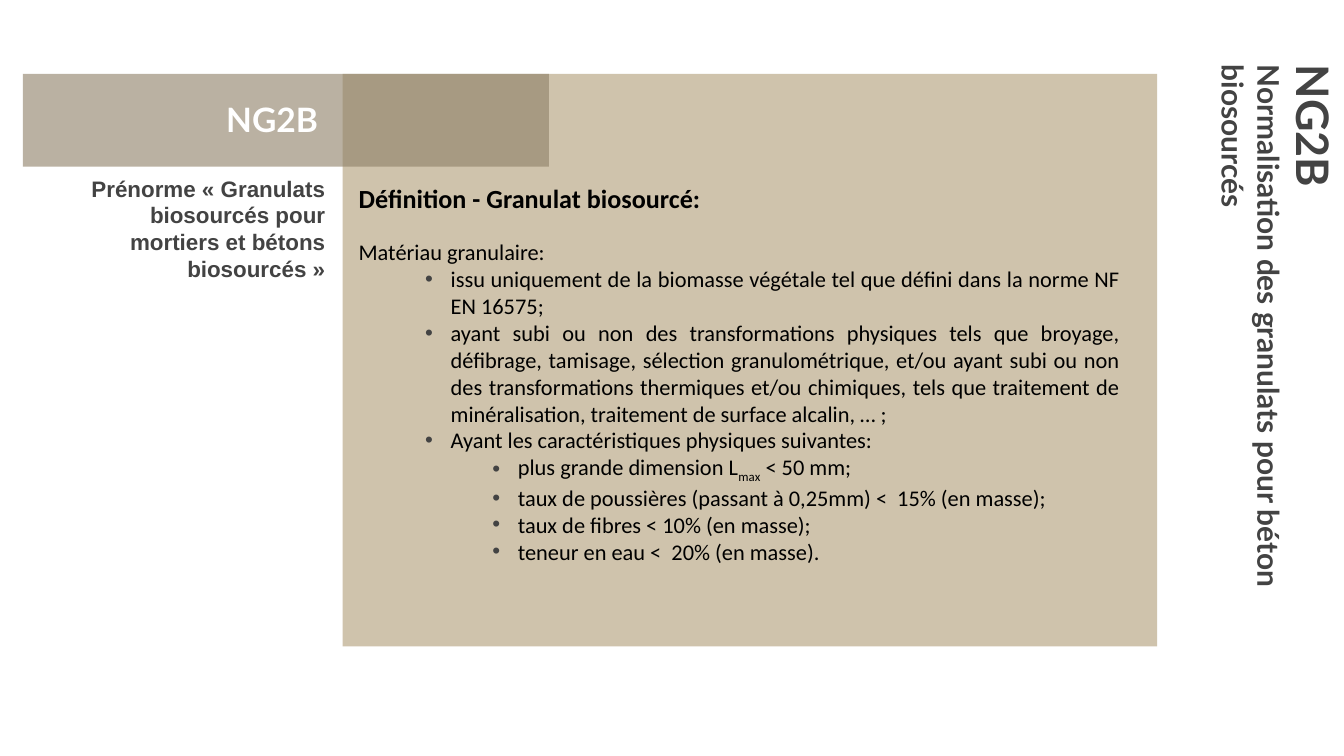
from lxml import etree
from pptx import Presentation
from pptx.dml.color import RGBColor
from pptx.enum.shapes import MSO_SHAPE
from pptx.enum.text import MSO_ANCHOR, PP_ALIGN
from pptx.oxml.ns import qn
from pptx.util import Pt

PX = 4572  # 200 px to the inch
RECTANGLE = MSO_SHAPE.RECTANGLE
TOP, MIDDLE = MSO_ANCHOR.TOP, MSO_ANCHOR.MIDDLE
LEFT, CENTER, RIGHT = PP_ALIGN.LEFT, PP_ALIGN.CENTER, PP_ALIGN.RIGHT
JUSTIFY = PP_ALIGN.JUSTIFY

SAND = RGBColor(0xCF, 0xC3, 0xAC)
TAUPE = RGBColor(0x90, 0x82, 0x69)
GRAY = RGBColor(0x43, 0x43, 0x43)
WHITE = RGBColor(0xFF, 0xFF, 0xFF)
BLACK = RGBColor(0, 0, 0)

INSET = 20
HANGING = 38
LEVEL_INDENTS = (38, 175, 275)

DEFINITION = [
    (0, "Matériau granulaire:"),
    (1, "issu uniquement de la biomasse végétale tel que défini dans la norme NF EN 16575;"),
    (1, "ayant subi ou non des transformations physiques tels que broyage, défibrage, "
        "tamisage, sélection granulométrique, et/ou ayant subi ou non des transformations "
        "thermiques et/ou chimiques, tels que traitement de minéralisation, traitement de "
        "surface alcalin, … ;"),
    (1, "Ayant les caractéristiques physiques suivantes:"),
    (2, "plus grande dimension L", "max", " < 50 mm;"),
    (2, "taux de poussières (passant à 0,25mm) <  15% (en masse);"),
    (2, "taux de fibres < 10% (en masse);"),
    (2, "teneur en eau <  20% (en masse)."),
]


def add_rectangle(slide, box, color, opacity=100):
    shape = slide.shapes.add_shape(RECTANGLE, *(v * PX for v in box))
    shape.shadow.inherit = False
    shape.fill.solid()
    shape.fill.fore_color.rgb = color
    shape.line.fill.background()
    if opacity < 100:
        rgb = shape._element.spPr.find(".//" + qn("a:srgbClr"))
        etree.SubElement(rgb, qn("a:alpha"), val=str(opacity * 1000))


def add_text_box(slide, box, anchor):
    shape = slide.shapes.add_textbox(*(v * PX for v in box))
    frame = shape.text_frame
    frame.word_wrap = True
    frame.vertical_anchor = anchor
    frame.margin_left = frame.margin_right = INSET * PX
    frame.margin_top = frame.margin_bottom = INSET * PX
    return shape


def style(paragraph, font_name, size, color, alignment, bold=True):
    paragraph.alignment = alignment
    font = paragraph.font
    font.name, font.size, font.bold = font_name, Pt(size), bold
    font.color.rgb = color


def set_indent(paragraph, level):
    """Indent a paragraph, with a gray hanging bullet below the first level."""
    paragraph.level = level
    properties = paragraph._p.get_or_add_pPr()
    properties.set("marL", str(LEVEL_INDENTS[level] * PX))
    properties.set("indent", str(-HANGING * PX if level else 0))
    if level:
        color = etree.SubElement(properties, qn("a:buClr"))
        etree.SubElement(color, qn("a:srgbClr"), val=str(GRAY))
        etree.SubElement(properties, qn("a:buFont"), typeface="Arial")
        etree.SubElement(properties, qn("a:buChar"), char="•")


def add_side_title(slide, box):
    """Title turned a quarter clockwise; box is its place before turning."""
    shape = add_text_box(slide, box, MIDDLE)
    shape.rotation = 90
    frame = shape.text_frame
    frame.text = "NG2B\nNormalisation des granulats pour béton biosourcés"
    for paragraph, size in zip(frame.paragraphs, (24, 16)):
        style(paragraph, "Lato", size, GRAY, LEFT)


def add_heading_band(slide, box):
    left, top, width, height = box
    add_rectangle(slide, box, TAUPE, opacity=62)
    label = add_text_box(slide, (left + 18, top + 18, width - 77, height - 40), MIDDLE)
    paragraph = label.text_frame.paragraphs[0]
    paragraph.text = "NG2B"
    style(paragraph, "Lato", 18, WHITE, CENTER)


def add_definition(slide, box):
    frame = add_text_box(slide, box, TOP).text_frame
    heading = frame.paragraphs[0]
    heading.text = "Définition - Granulat biosourcé:"
    set_indent(heading, 0)
    style(heading, "Calibri", 14, BLACK, JUSTIFY)
    heading.space_after = Pt(13)
    for level, *parts in DEFINITION:
        paragraph = frame.add_paragraph()
        set_indent(paragraph, level)
        style(paragraph, "Calibri", 12, BLACK, JUSTIFY, bold=False)
        for index, part in enumerate(parts):
            run = paragraph.add_run()
            run.text = part
            if index == 1:
                run.font._element.set("baseline", "-25000")  # subscript


def add_standard_name(slide, box):
    paragraph = add_text_box(slide, box, TOP).text_frame.paragraphs[0]
    paragraph.text = "Prénorme «\u00a0Granulats biosourcés pour mortiers et bétons biosourcés\u00a0»"
    set_indent(paragraph, 0)
    style(paragraph, "Arial", 12, GRAY, RIGHT)


def main():
    presentation = Presentation()
    presentation.slide_width, presentation.slide_height = 2000 * PX, 1125 * PX
    blank = presentation.slide_layouts[6]
    slide = presentation.slides.add_slide(blank)
    add_rectangle(slide, (510, 110, 1212, 852), SAND)
    add_side_title(slide, (1402, 464, 1000, 226))
    add_heading_band(slide, (34, 110, 783, 138))
    add_definition(slide, (476, 252, 1211, 666))
    add_standard_name(slide, (38, 240, 466, 180))
    presentation.save("out.pptx")


if __name__ == "__main__":
    main()
